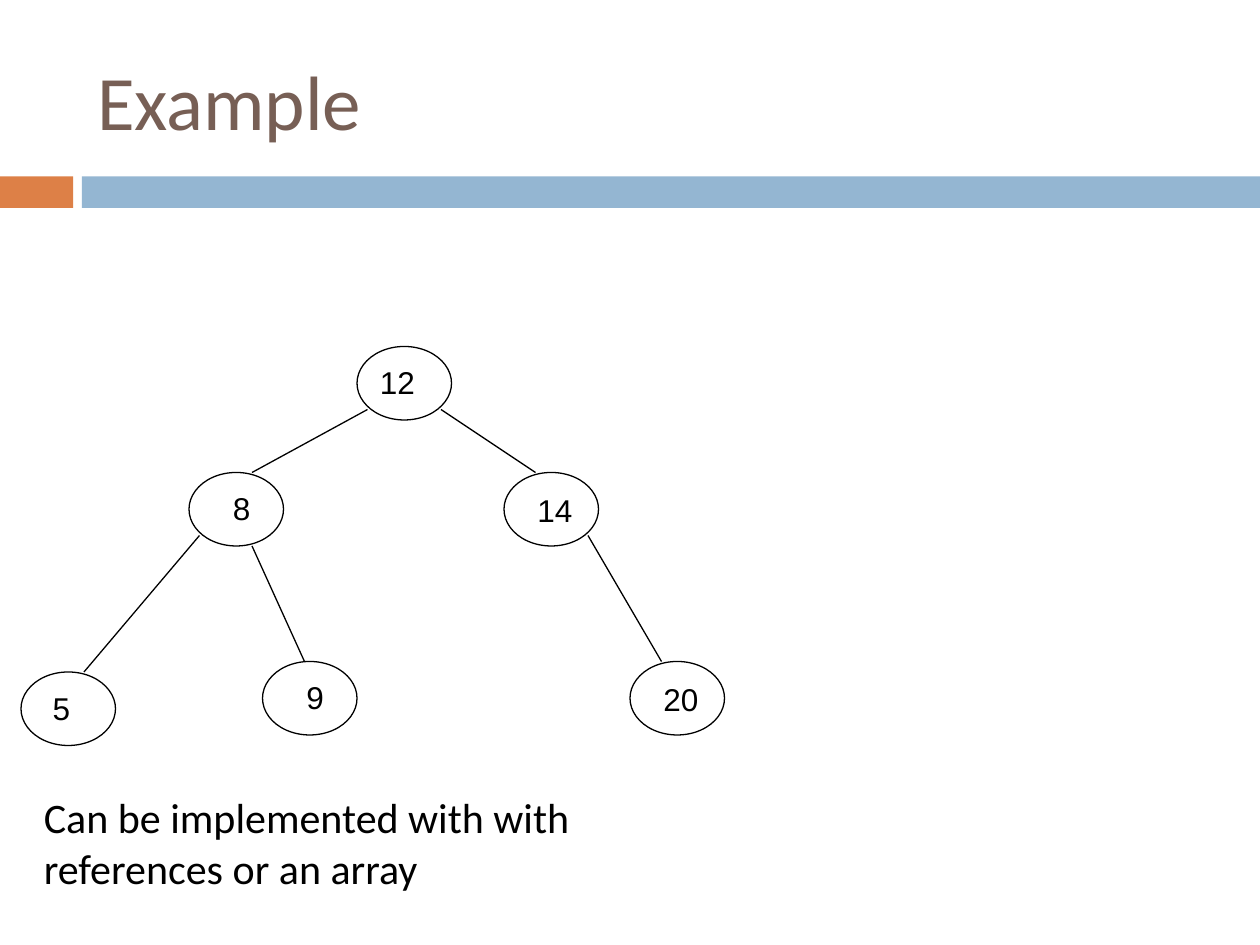
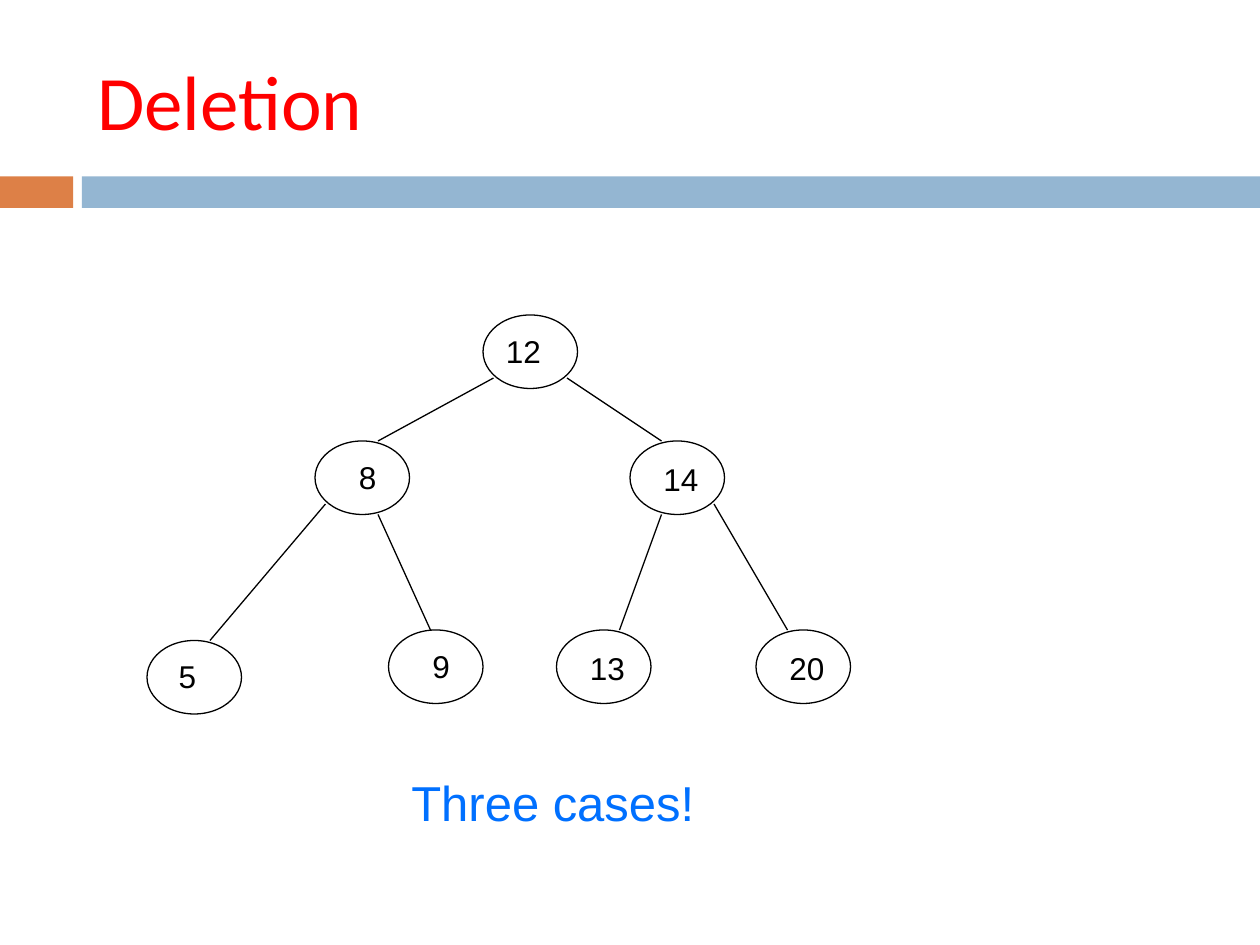
from lxml.etree import SubElement
from pptx import Presentation
from pptx.dml.color import RGBColor
from pptx.enum.shapes import MSO_CONNECTOR as Line, MSO_SHAPE as Shape
from pptx.enum.text import MSO_ANCHOR as Anchor, MSO_AUTO_SIZE as AutoSize, PP_ALIGN as Align
from pptx.oxml.ns import qn
from pptx.util import Inches, Pt

GRID = Inches(1) // 12
BLACK, RED, BROWN = "000000", "FF0000", "775F55"
ORANGE, PALE_BLUE, BRIGHT_BLUE = "DD8047", "94B6D2", "0070FF"

BANDS = [(0, 0.58, ORANGE), (0.65, 9.35, PALE_BLUE)]
NODE_W, NODE_H = 9, 7
LABEL_W, LABEL_H = 8, 4.8

# value: node column, node row, label offset across, label offset down
NODES = {
    "12": (34, 33, 1, 1),
    "8": (18, 45, 3, 1),
    "14": (48, 45, 2, 1.2),
    " 5": (2, 64, 1, 1),
    "9": (25, 63, 3, 1),
    "13": (41, 63, 2, 1.2),
    "20": (60, 63, 2, 1.2),
}
EDGES = {
    ("12", "8"): (35, 39, 24, 45),
    ("12", "14"): (42, 39, 51, 45),
    ("8", " 5"): (19, 51, 8, 64),
    ("8", "9"): (24, 52, 29, 63),
    ("14", "13"): (51, 52, 47, 63),
    ("14", "20"): (56, 51, 63, 63),
}
SLIDES = [
    ("Example", BROWN, (0, 0), {"13"},
     ("Can be implemented with with references or an array",
      (3, 74.8, 68.2, 10.9), 24, "Calibri", BLACK)),
    ("Deletion", RED, (12, -3), set(),
     ("Three cases!", (38, 73, 34, 6.8), 28, "Arial", BRIGHT_BLUE)),
]


def rgb(color):
    return RGBColor.from_string(color)


def write(frame, text, size, font, color):
    frame.word_wrap = True
    run = frame.paragraphs[0].add_run()
    run.text = text
    run.font.size = Pt(size)
    run.font.name = font
    run.font.color.rgb = rgb(color)


prs = Presentation()
prs.slide_width, prs.slide_height = Inches(10), Inches(7.5)
title_only = prs.slide_layouts[5]

for heading, heading_color, (shift_x, shift_y), missing, caption in SLIDES:
    slide = prs.slides.add_slide(title_only)
    shapes = slide.shapes

    for left, width, color in BANDS:
        band = shapes.add_shape(Shape.RECTANGLE, Inches(left), Inches(1.4),
                                Inches(width), Inches(0.25))
        band.shadow.inherit = False
        band.fill.solid()
        band.fill.fore_color.rgb = rgb(color)
        band.line.fill.background()

    title = shapes.title
    title.left, title.top = Inches(0.67), Inches(0.25)
    title.width, title.height = Inches(8.92), Inches(1.08)
    write(title.text_frame, heading, 44, "Calibri", heading_color)
    title.text_frame.auto_size = AutoSize.NONE
    title.text_frame.vertical_anchor = Anchor.MIDDLE
    title.text_frame.paragraphs[0].alignment = Align.LEFT

    for value, (column, row, across, down) in NODES.items():
        if value in missing:
            continue
        x, y = column + shift_x, row + shift_y
        node = shapes.add_shape(Shape.OVAL, x * GRID, y * GRID, NODE_W * GRID, NODE_H * GRID)
        node.shadow.inherit = False
        node.fill.background()
        node.line.color.rgb = rgb(BLACK)
        node.line.width = Pt(0.75)
        label = shapes.add_textbox(int((x + across) * GRID), int((y + down) * GRID),
                                   LABEL_W * GRID, int(LABEL_H * GRID))
        write(label.text_frame, value, 18, "Arial", BLACK)

    for ends, (x1, y1, x2, y2) in EDGES.items():
        if missing.intersection(ends):
            continue
        edge = shapes.add_connector(
            Line.STRAIGHT, (x1 + shift_x) * GRID, (y1 + shift_y) * GRID,
            (x2 + shift_x) * GRID, (y2 + shift_y) * GRID)
        edge.line.color.rgb = rgb(BLACK)
        edge.line.width = Pt(0.75)
        SubElement(edge._element.spPr, qn("a:effectLst"))

    text, box, size, font, color = caption
    note = shapes.add_textbox(*[int(length * GRID) for length in box])
    write(note.text_frame, text, size, font, color)

prs.save("out.pptx")
